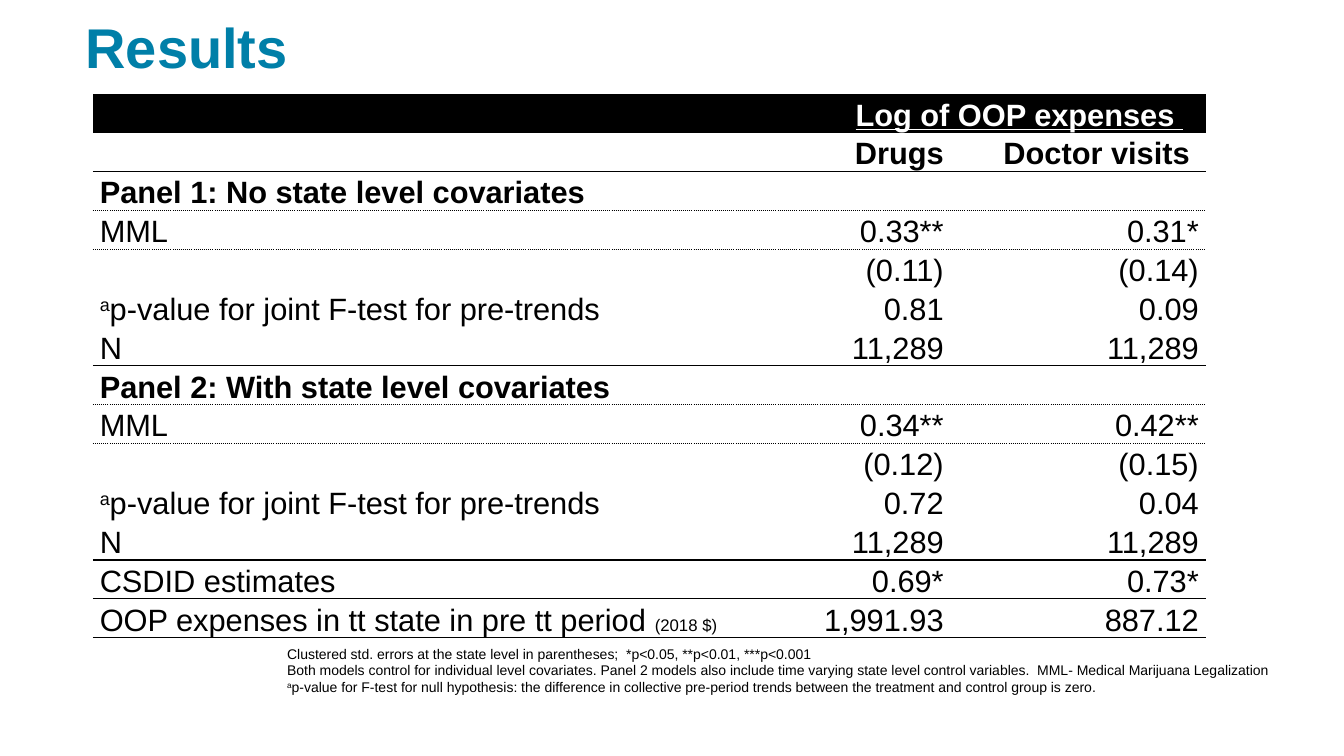
from dataclasses import dataclass

from lxml.etree import SubElement
from pptx import Presentation
from pptx.dml.color import RGBColor
from pptx.enum.text import MSO_ANCHOR as Anchor, PP_ALIGN as Align
from pptx.oxml import parse_xml
from pptx.oxml.ns import nsdecls, qn
from pptx.util import Inches, Pt


@dataclass(frozen=True)
class Theme:
    font: str = "Arial"
    title_color: str = "007FA8"
    ink: str = "000000"
    paper: str = "FFFFFF"
    title_size: int = 40
    table_size: int = 22
    unit_size: int = 12
    note_size: int = 10
    rule_width: int = 1


THEME = Theme()
PLAIN_STYLE = "{2D5ABB26-0587-4C30-8999-92F81FD0307C}"
COLUMNS = [5.9, 1.01, 0.27, 1.33, 2.53]
SIDE_INSET = 0.07
SUPER_A = ("a", {"superscript": True})
F_TEST = [SUPER_A, ("p-value for joint F-test for pre-trends", {})]
OOP_LABEL = [("OOP expenses in tt state in pre tt period ", {}),
             ("(2018 $)", {"size": THEME.unit_size})]

# Each panel: heading, first column of the Drugs values, rows of label, Drugs, Doctor visits
PANELS = [
    ("Panel 1: No state level covariates", 3, [
        ("MML", "0.33**", "0.31*"),
        ("", "(0.11)", "(0.14)"),
        (F_TEST, "0.81", "0.09"),
        ("N", "11,289", "11,289")]),
    ("Panel 2: With state level covariates", 2, [
        ("MML", "0.34**", "0.42**"),
        ("", "(0.12)", "(0.15)"),
        (F_TEST, "0.72", "0.04"),
        ("N", "11,289", "11,289"),
        ("CSDID estimates", "0.69*", "0.73*"),
        (OOP_LABEL, "1,991.93", "887.12")]),
]
RULE_BELOW = {1: "solid", 2: "sysDot", 6: "solid", 7: "sysDot",
              11: "solid", 12: "solid", 13: "solid"}
ROW_COUNT = 2 + sum(1 + len(rows) for _, _, rows in PANELS)

NOTES = [
    "Clustered std. errors at the state level in parentheses;  *p<0.05, **p<0.01, ***p<0.001",
    "Both models control for individual level covariates. Panel 2 models also include "
    "time varying state level control variables.  MML- Medical Marijuana Legalization",
    [SUPER_A, ("p-value for F-test for null hypothesis: the difference in collective pre-period "
               "trends between the treatment and control group is zero.", {})],
]


def write(paragraph, content, size, color=THEME.ink, align=Align.LEFT, **font_format):
    """Fill a paragraph from a string or a list of (text, format) pieces."""
    paragraph.alignment = align
    pieces = [(content, {})] if isinstance(content, str) else content
    for text, piece_format in pieces:
        run = paragraph.add_run()
        run.text = text
        values = {"name": THEME.font, "size": size, **font_format, **piece_format}
        if values.pop("superscript", False):
            run.font._element.set("baseline", "30000")
        values["size"] = Pt(values["size"])
        for name, value in values.items():
            setattr(run.font, name, value)
        run.font.color.rgb = RGBColor.from_string(color)


def add_text_frame(slide, box, anchor):
    frame = slide.shapes.add_textbox(*map(Inches, box)).text_frame
    frame.word_wrap = True
    frame.vertical_anchor = anchor
    return frame


def add_title(slide, box):
    paragraph = add_text_frame(slide, box, Anchor.MIDDLE).paragraphs[0]
    paragraph.line_spacing = 0.9
    write(paragraph, "Results", THEME.title_size, THEME.title_color, bold=True)


def add_notes(slide, box):
    frame = add_text_frame(slide, box, Anchor.TOP)
    for index, note in enumerate(NOTES):
        paragraph = frame.add_paragraph() if index else frame.paragraphs[0]
        write(paragraph, note, THEME.note_size)


def style_cell(cell, row):
    """Set insets, fill and the rules above and below a cell."""
    insets = {"margin_left": SIDE_INSET, "margin_right": SIDE_INSET,
              "margin_top": 0, "margin_bottom": 0}
    for name, inset in insets.items():
        setattr(cell, name, Inches(inset))
    cell.vertical_anchor = Anchor.BOTTOM
    properties = cell._tc.get_or_add_tcPr()
    for tag, dash in (("lnT", RULE_BELOW.get(row - 1)), ("lnB", RULE_BELOW.get(row))):
        if dash:
            properties.append(parse_xml(
                f'<a:{tag} {nsdecls("a")} w="{Pt(THEME.rule_width)}"><a:solidFill>'
                f'<a:srgbClr val="{THEME.ink}"/></a:solidFill>'
                f'<a:prstDash val="{dash}"/></a:{tag}>'))
    if row == 0:
        cell.fill.solid()
        cell.fill.fore_color.rgb = RGBColor.from_string(THEME.ink)
    else:
        cell.fill.background()


def fill_cell(table, row, first, last, content, **text_format):
    """Write into the cell that spans columns first to last."""
    cell = table.cell(row, first)
    if last > first:
        cell.merge(table.cell(row, last))
    if content:
        write(cell.text_frame.paragraphs[0], content, THEME.table_size, **text_format)
    return cell


def fill_header(table):
    heading = fill_cell(table, 0, 1, 4, "Log of OOP expenses ", color=THEME.paper,
                        align=Align.CENTER, bold=True, underline=True)
    heading.margin_left = Inches(1.51)
    fill_cell(table, 1, 1, 3, "Drugs", align=Align.RIGHT, bold=True)
    visits = fill_cell(table, 1, 4, 4, "Doctor visits", align=Align.RIGHT, bold=True)
    visits.margin_right = Inches(0.16)


def fill_panel(table, top, heading, drugs_column, rows):
    fill_cell(table, top, 0, 3, heading, bold=True)
    for row, (label, drugs, visits) in enumerate(rows, top + 1):
        fill_cell(table, row, 0, drugs_column - 1, label)
        fill_cell(table, row, drugs_column, 3, drugs, align=Align.RIGHT)
        fill_cell(table, row, 4, 4, visits, align=Align.RIGHT)


def add_results_table(slide, box):
    table = slide.shapes.add_table(ROW_COUNT, len(COLUMNS), *map(Inches, box)).table
    table.first_row = table.horz_banding = False
    properties = table._tbl.tblPr
    style = properties.find(qn("a:tableStyleId"))
    if style is None:
        style = SubElement(properties, qn("a:tableStyleId"))
    style.text = PLAIN_STYLE
    for column, share in zip(table.columns, COLUMNS):
        column.width = Inches(box[2] * share / sum(COLUMNS))
    for row in range(ROW_COUNT):
        table.rows[row].height = Inches(box[3] / ROW_COUNT)
        for column in range(len(COLUMNS)):
            style_cell(table.cell(row, column), row)
    fill_header(table)
    top = 2
    for heading, drugs_column, rows in PANELS:
        fill_panel(table, top, heading, drugs_column, rows)
        top += 1 + len(rows)


def main():
    presentation = Presentation()
    presentation.slide_width = Inches(13.33)
    presentation.slide_height = Inches(7.5)
    slide = presentation.slides.add_slide(presentation.slide_layouts[6])
    add_title(slide, (0.75, 0.02, 11.5, 0.95))
    add_results_table(slide, (0.92, 0.93, 11.04, 5.4))
    add_notes(slide, (2.75, 6.35, 10.5, 0.61))
    presentation.save("out.pptx")


if __name__ == "__main__":
    main()
